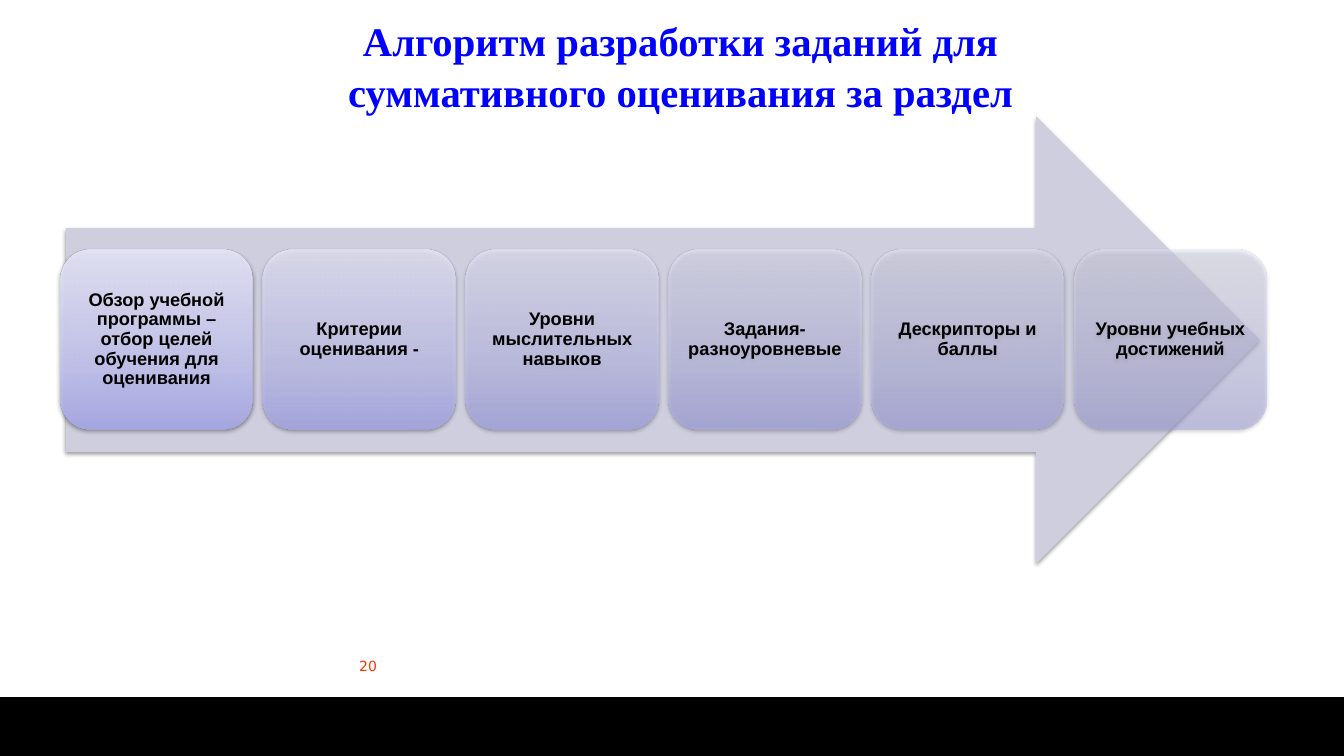
import pptx
import pptx.dml.color
import pptx.enum.shapes
import pptx.enum.text
import pptx.oxml
import pptx.oxml.ns
import pptx.util

Cm = pptx.util.Cm
Pt = pptx.util.Pt
Shape = pptx.enum.shapes.MSO_SHAPE
Align = pptx.enum.text.PP_ALIGN
Anchor = pptx.enum.text.MSO_ANCHOR
AutoSize = pptx.enum.text.MSO_AUTO_SIZE

COLORS = {
    "title": "0000FF",
    "number": "FF3300",
    "black": "000000",
    "arrow": "CECEDE",
    "step_bottom": "A9A9E9",
    "step_middle": "C4C4EF",
    "step_top": "E8E8FA",
}
STEPS = [
    "Обзор учебной программы – отбор целей обучения для оценивания",
    "Критерии оценивания -",
    "Уровни мыслительных навыков",
    "Задания- разноуровневые",
    "Дескрипторы и баллы",
    "Уровни учебных достижений",
]
STEP_LEFT, STEP_PITCH = 1.52, 5.11
NAMESPACE = pptx.oxml.ns.nsdecls("a")


def rgb(name):
    return pptx.dml.color.RGBColor.from_string(COLORS[name])


def write_text(shape, text, *, font, size, color, bold=False, align=Align.CENTER,
               anchor=Anchor.TOP, spacing=1.0, margins=(0.25, 0.13),
               auto_size=AutoSize.NONE):
    """Put one formatted paragraph in a shape; margins are horizontal, vertical in cm."""
    frame = shape.text_frame
    frame.text = text
    frame.word_wrap = True
    frame.auto_size = auto_size
    frame.vertical_anchor = anchor
    frame.margin_left = frame.margin_right = Cm(margins[0])
    frame.margin_top = frame.margin_bottom = Cm(margins[1])
    paragraph = frame.paragraphs[0]
    paragraph.alignment = align
    paragraph.line_spacing = spacing
    paragraph.font.name = font
    paragraph.font.size = Pt(size)
    paragraph.font.bold = bold
    paragraph.font.color.rgb = rgb(color)


class SlideBuilder:
    def __init__(self, presentation):
        self.slide = presentation.slides.add_slide(presentation.slide_layouts[5])
        self.heading_font = "Times New Roman"
        self.body_font = "Arial"
        self.number_font = "DejaVu Sans"

    def add_title(self, text, left, top, width, height):
        title = self.slide.shapes.title
        title.left, title.top = Cm(left), Cm(top)
        title.width, title.height = Cm(width), Cm(height)
        write_text(title, text, font=self.heading_font, size=29, color="title",
                   bold=True, spacing=1.05, margins=(0.23, 0.13),
                   auto_size=AutoSize.SHAPE_TO_FIT_TEXT)

    def add_filled_shape(self, kind, color, left, top, width, height, shadow=True):
        shape = self.slide.shapes.add_shape(
            kind, Cm(left), Cm(top), Cm(width), Cm(height))
        shape.fill.solid()
        shape.fill.fore_color.rgb = rgb(color)
        shape.line.fill.background()
        shape.shadow.inherit = False
        if shadow:
            effects = shape._element.spPr.find(pptx.oxml.ns.qn("a:effectLst"))
            effects.append(pptx.oxml.parse_xml(
                f'<a:outerShdw {NAMESPACE} blurRad="{Pt(3.1)}" dist="{Pt(1.6)}" '
                f'dir="5400000" rotWithShape="0"><a:srgbClr val="{COLORS["black"]}">'
                '<a:alpha val="38000"/></a:srgbClr></a:outerShdw>'))
        return shape

    def add_step(self, text, left, top, width, height, opacity):
        step = self.add_filled_shape(
            Shape.ROUNDED_RECTANGLE, "step_middle", left, top, width, height)
        stops = "".join(
            f'<a:gs pos="{position * 1000}"><a:srgbClr val="{COLORS[name]}">'
            f'<a:alpha val="{opacity * 1000}"/></a:srgbClr></a:gs>'
            for position, name in ((0, "step_bottom"), (35, "step_middle"), (100, "step_top")))
        properties = step._element.spPr
        solid_fill = properties.find(pptx.oxml.ns.qn("a:solidFill"))
        properties.replace(solid_fill, pptx.oxml.parse_xml(
            f'<a:gradFill {NAMESPACE} rotWithShape="1"><a:gsLst>{stops}</a:gsLst>'
            '<a:lin ang="16200000" scaled="0"/></a:gradFill>'))
        write_text(step, text, font=self.body_font, size=13, color="black", bold=True,
                   anchor=Anchor.MIDDLE, spacing=0.9, margins=(0.13, 0.13))

    def add_number(self, text, left, top, width, height):
        box = self.slide.shapes.add_textbox(Cm(left), Cm(top), Cm(width), Cm(height))
        write_text(box, text, font=self.number_font, size=10, color="number",
                   align=Align.RIGHT)


def main():
    presentation = pptx.Presentation()
    presentation.slide_width = Cm(33.87)
    presentation.slide_height = Cm(19.05)
    builder = SlideBuilder(presentation)
    builder.add_filled_shape(Shape.RECTANGLE, "black", 0, 17.57, 33.87, 1.48, shadow=False)
    builder.add_number("20", 6.78, 16.43, 2.97, 0.91)
    builder.add_filled_shape(Shape.RIGHT_ARROW, "arrow", 1.67, 2.93, 30.08, 11.28)
    for index, text in enumerate(STEPS):
        builder.add_step(text, STEP_LEFT + index * STEP_PITCH, 6.3, 4.85, 4.52,
                         opacity=90 - 8 * index)
    builder.add_title("Алгоритм разработки заданий для суммативного оценивания за раздел",
                      6.15, 0.2, 22.02, 2.72)
    presentation.save("out.pptx")


if __name__ == "__main__":
    main()
